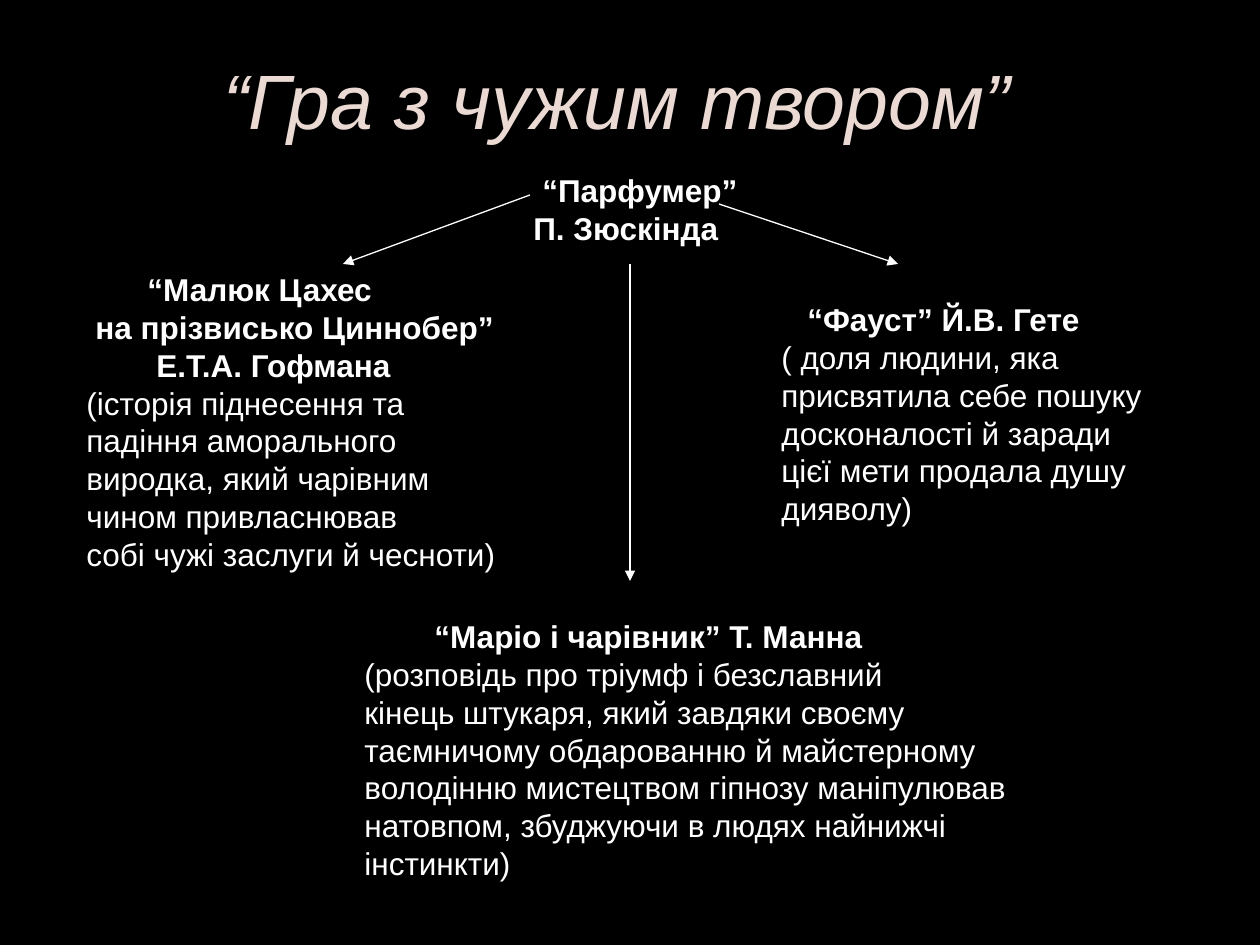
from lxml.etree import SubElement
from pptx import Presentation
from pptx.dml.color import RGBColor
from pptx.enum.shapes import MSO_CONNECTOR
from pptx.enum.text import MSO_ANCHOR, MSO_AUTO_SIZE, PP_ALIGN
from pptx.oxml.ns import qn
from pptx.util import Emu, Pt

BLACK = RGBColor(0x00, 0x00, 0x00)
WHITE = RGBColor(0xFF, 0xFF, 0xFF)
BLUSH = RGBColor(0xEB, 0xDA, 0xD4)
FONT = "Arial"
EMU_PER_PX = 914400 / 126
TITLE_ONLY = 5


def px(length):
    return Emu(round(length * EMU_PER_PX))


class SlideBuilder:
    def __init__(self, slide):
        self.slide = slide
        fill = slide.background.fill
        fill.solid()
        fill.fore_color.rgb = BLACK

    @staticmethod
    def style(paragraph, size, color, bold=False, italic=False):
        font = paragraph.font
        font.name, font.size = FONT, Pt(size)
        font.bold, font.italic = bold, italic
        font.color.rgb = color

    def title(self, text, left, top, width, height):
        shape = self.slide.shapes.title
        shape.left, shape.top = px(left), px(top)
        shape.width, shape.height = px(width), px(height)
        frame = shape.text_frame
        frame.text = text
        frame.word_wrap = True
        frame.auto_size = MSO_AUTO_SIZE.NONE
        frame.vertical_anchor = MSO_ANCHOR.TOP
        frame.margin_left = frame.margin_right = 0
        frame.margin_top, frame.margin_bottom = px(8), 0
        paragraph = frame.paragraphs[0]
        paragraph.alignment = PP_ALIGN.CENTER
        self.style(paragraph, 44, BLUSH, italic=True)

    def work(self, left, top, width, height, heading, summary=()):
        """Place a literary work: bold (text, indent) heading lines, then plain lines."""
        shape = self.slide.shapes.add_textbox(px(left), px(top), px(width), px(height))
        frame = shape.text_frame
        frame.word_wrap = True
        frame.margin_right = 0
        lines = [(text, indent, True) for text, indent in heading]
        lines += [(text, 0, False) for text in summary]
        for number, (text, indent, bold) in enumerate(lines):
            paragraph = frame.add_paragraph() if number else frame.paragraphs[0]
            paragraph.text = text
            paragraph.line_spacing = Pt(21.6)
            if indent:
                paragraph._p.get_or_add_pPr().set("indent", str(px(indent)))
            self.style(paragraph, 18, WHITE, bold)

    def arrow(self, start, end):
        connector = self.slide.shapes.add_connector(
            MSO_CONNECTOR.STRAIGHT, *map(px, start + end))
        connector.line.color.rgb = WHITE
        connector.line.width = Pt(0.75)
        SubElement(connector.line._get_or_add_ln(), qn("a:tailEnd"), type="triangle")
        SubElement(connector._element.spPr, qn("a:effectLst"))


def main():
    presentation = Presentation()
    presentation.slide_width, presentation.slide_height = px(1260), px(945)
    layout = presentation.slide_layouts[TITLE_ONLY]
    builder = SlideBuilder(presentation.slides.add_slide(layout))

    builder.title("“Гра з чужим твором”", 206, 45, 822, 97)
    builder.work(521, 165, 240, 89, [("“Парфумер”", 9), ("П. Зюскінда", 0)])
    builder.work(
        74, 264, 435, 353,
        [("“Малюк Цахес", 61), ("на прізвисько Циннобер”", 9), ("Е.Т.А. Гофмана", 70)],
        ["(історія піднесення та", "падіння аморального", "виродка, який чарівним",
         "чином привласнював", "собі чужі заслуги й чесноти)"])
    builder.work(
        769, 294, 396, 239,
        [("“Фауст” Й.В. Гете", 26)],
        ["( доля людини, яка", "присвятила себе пошуку", "досконалості й заради",
         "цієї мети продала душу", "дияволу)"])
    builder.work(
        352, 611, 672, 277,
        [("“Маріо і чарівник” Т. Манна", 70)],
        ["(розповідь про тріумф і безславний", "кінець штукаря, який завдяки своєму",
         "таємничому обдарованню й майстерному",
         "володінню мистецтвом гіпнозу маніпулював",
         "натовпом, збуджуючи в людях найнижчі", "інстинкти)"])

    for start, end in [((530, 195), (343, 264)),
                       ((719, 204), (898, 264)),
                       ((630, 264), (630, 581))]:
        builder.arrow(start, end)

    presentation.save("out.pptx")


if __name__ == "__main__":
    main()
